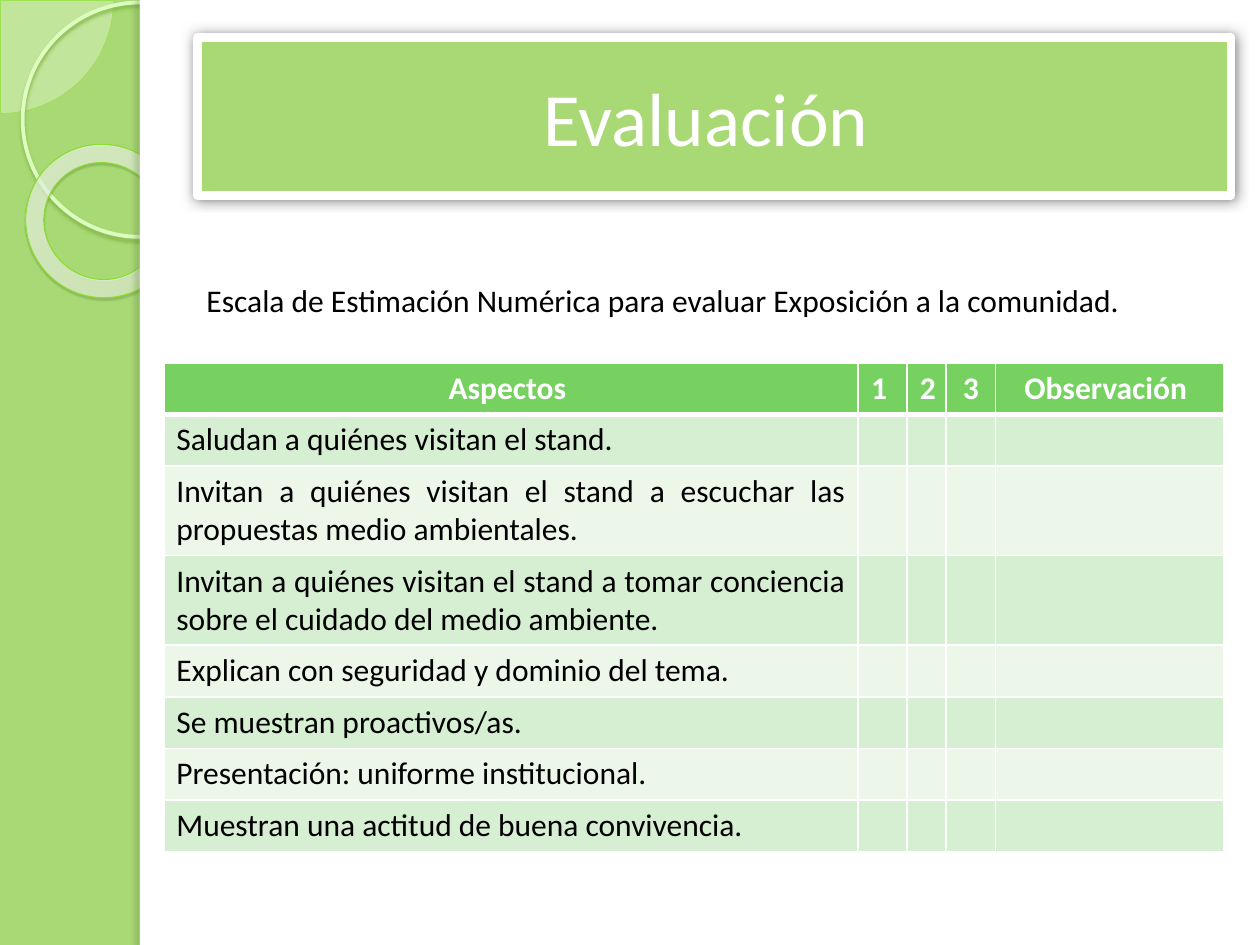
from lxml import etree
from pptx import Presentation
from pptx.dml.color import RGBColor
from pptx.enum.shapes import MSO_SHAPE
from pptx.enum.text import MSO_ANCHOR, PP_ALIGN
from pptx.oxml import parse_xml
from pptx.oxml.ns import nsdecls, qn
from pptx.util import Inches, Pt

COLORS = {
    "green": "A9D975", "white": "FFFFFF", "black": "000000",
    "pie": "F2FFE7", "pie_line": "92E539",
    "ring": "DCFFC0", "ring_shadow": "7EB344",
    "donut_line": "89DE2E", "donut_shadow": "3F6219",
    "edge_shadow": "546E38",
    "header": "76D161", "band_dark": "D6EED2", "band_light": "ECF7EA",
}
FONT = "Calibri"


def add_shape(kind, left, top, width, height, fill=None, line=None, shadow=None):
    """line: colour, points; shadow: colour, opacity %, blur pt, distance pt, angle."""
    shape = slide.shapes.add_shape(
        kind, Inches(left), Inches(top), Inches(width), Inches(height))
    shape.shadow.inherit = False
    if fill:
        shape.fill.solid()
        shape.fill.fore_color.rgb = RGBColor.from_string(COLORS[fill])
    else:
        shape.fill.background()
    if line:
        shape.line.color.rgb = RGBColor.from_string(COLORS[line[0]])
        shape.line.width = Pt(line[1])
    else:
        shape.line.fill.background()
    if shadow:
        color, opacity, blur, distance, angle = shadow
        shape._element.spPr.find(qn("a:effectLst")).append(parse_xml(
            f'<a:outerShdw {nsdecls("a")} blurRad="{Pt(blur)}" dist="{Pt(distance)}" '
            f'dir="{angle * 60000}" algn="ctr" rotWithShape="0">'
            f'<a:srgbClr val="{COLORS[color]}"><a:alpha val="{opacity * 1000}"/>'
            f'</a:srgbClr></a:outerShdw>'))
    return shape


def add_run(paragraph, text, size, color, bold=False):
    run = paragraph.add_run()
    run.text = text
    run.font.name = FONT
    run.font.size = Pt(size)
    run.font.bold = bold
    run.font.color.rgb = RGBColor.from_string(COLORS[color])


presentation = Presentation()
presentation.slide_width = Inches(10)
presentation.slide_height = Inches(7.5)
slide = presentation.slides.add_slide(presentation.slide_layouts[6])
slide.background.fill.solid()
slide.background.fill.fore_color.rgb = RGBColor.from_string(COLORS["green"])

# Side decoration: quarter disc, ring and donut
pie = add_shape(MSO_SHAPE.PIE, -0.89, -0.89, 1.79, 1.79, "pie", ("pie_line", 0.25))
pie.adjustments[0] = 0
pie.adjustments[1] = 54.02
pie_color = pie._element.spPr.find(qn("a:solidFill")).find(qn("a:srgbClr"))
etree.SubElement(pie_color, qn("a:alpha"), val="33000")

add_shape(MSO_SHAPE.OVAL, 0.18, 0.02, 1.86, 1.86, None, ("ring", 2.15),
          ("ring_shadow", 85, 2, 2, 90))

donut = add_shape(MSO_SHAPE.DONUT, 0.2, 1.15, 1.23, 1.21, None, ("donut_line", 0.58),
                  ("donut_shadow", 35, 1, 1.2, 75))
donut.rotation = 38.6
donut.adjustments[0] = 0.12
stops = "".join(
    f'<a:gs pos="{position * 1000}"><a:srgbClr val="{color}">'
    f'<a:alpha val="{opacity * 1000}"/></a:srgbClr></a:gs>'
    for position, color, opacity in [
        (0, "F6FFF0", 70), (70, "FBFFF7", 55), (100, "98FF28", 60)])
donut_properties = donut._element.spPr
donut_properties.replace(donut_properties.find(qn("a:noFill")), parse_xml(
    f'<a:gradFill {nsdecls("a")} rotWithShape="1"><a:gsLst>{stops}</a:gsLst>'
    '<a:path path="circle"><a:fillToRect l="-408000" t="-50000" r="508000" b="150000"/>'
    '</a:path></a:gradFill>'))

# White page and its shaded left edge
add_shape(MSO_SHAPE.RECTANGLE, 1.11, 0, 8.89, 7.5, "white")
add_shape(MSO_SHAPE.RECTANGLE, 1.11, 0, 0.08, 7.5, "white",
          shadow=("edge_shadow", 25, 3, 3, 180))

# Title
title = add_shape(MSO_SHAPE.RECTANGLE, 1.57, 0.3, 8.2, 1.25, "green", ("white", 5),
                  ("black", 50, 7.5, 0, 0))
title.text_frame.word_wrap = True
title.text_frame.vertical_anchor = MSO_ANCHOR.MIDDLE
paragraph = title.text_frame.paragraphs[0]
paragraph.alignment = PP_ALIGN.CENTER
add_run(paragraph, "Evaluación ", 43, "white")

# Evaluation table
headings = ["Aspectos ", "1 ", "2", "3", "Observación "]
aspects = [
    "Saludan a quiénes visitan el stand.",
    "Invitan a quiénes visitan el stand a escuchar las propuestas medio ambientales.",
    "Invitan a quiénes visitan el stand a tomar conciencia sobre el cuidado del medio ambiente. ",
    "Explican con seguridad y dominio del tema. ",
    "Se muestran proactivos/as.",
    "Presentación: uniforme institucional. ",
    "Muestran una actitud de buena convivencia. ",
]
left_aligned_row = 5
column_widths = [5.51, 0.39, 0.31, 0.39, 1.81]
row_height = 0.41
rows = [headings] + [[aspect, "", "", "", ""] for aspect in aspects]
table = slide.shapes.add_table(
    len(rows), len(headings), Inches(1.3), Inches(2.88),
    Inches(sum(column_widths)), Inches(row_height * len(rows))).table
for column, width in zip(table.columns, column_widths):
    column.width = Inches(width)

for row_index, texts in enumerate(rows):
    table.rows[row_index].height = Inches(row_height)
    is_header = row_index == 0
    if is_header:
        fill = "header"
    else:
        fill = "band_dark" if row_index % 2 else "band_light"
    # The rule under the header is thicker than the others
    borders = {"lnL": 1, "lnR": 1, "lnT": 3 if row_index == 1 else 1,
               "lnB": 3 if is_header else 1}
    for column_index, text in enumerate(texts):
        cell = table.cell(row_index, column_index)
        cell_properties = cell._tc.get_or_add_tcPr()
        for side, points in borders.items():
            cell_properties.append(parse_xml(
                f'<a:{side} {nsdecls("a")} w="{Pt(points)}"><a:solidFill>'
                f'<a:srgbClr val="{COLORS["white"]}"/></a:solidFill></a:{side}>'))
        cell.fill.solid()
        cell.fill.fore_color.rgb = RGBColor.from_string(COLORS[fill])
        if text:
            paragraph = cell.text_frame.paragraphs[0]
            if is_header:
                paragraph.alignment = PP_ALIGN.CENTER
            elif row_index != left_aligned_row:
                paragraph.alignment = PP_ALIGN.JUSTIFY
            add_run(paragraph, text, 18, "white" if is_header else "black", is_header)

# Table caption
caption = slide.shapes.add_textbox(Inches(1.54), Inches(2.18), Inches(8.19), Inches(0.4))
caption.text_frame.word_wrap = True
add_run(caption.text_frame.paragraphs[0],
        "Escala de Estimación Numérica para evaluar Exposición a la comunidad.", 18, "black")

presentation.save("out.pptx")
